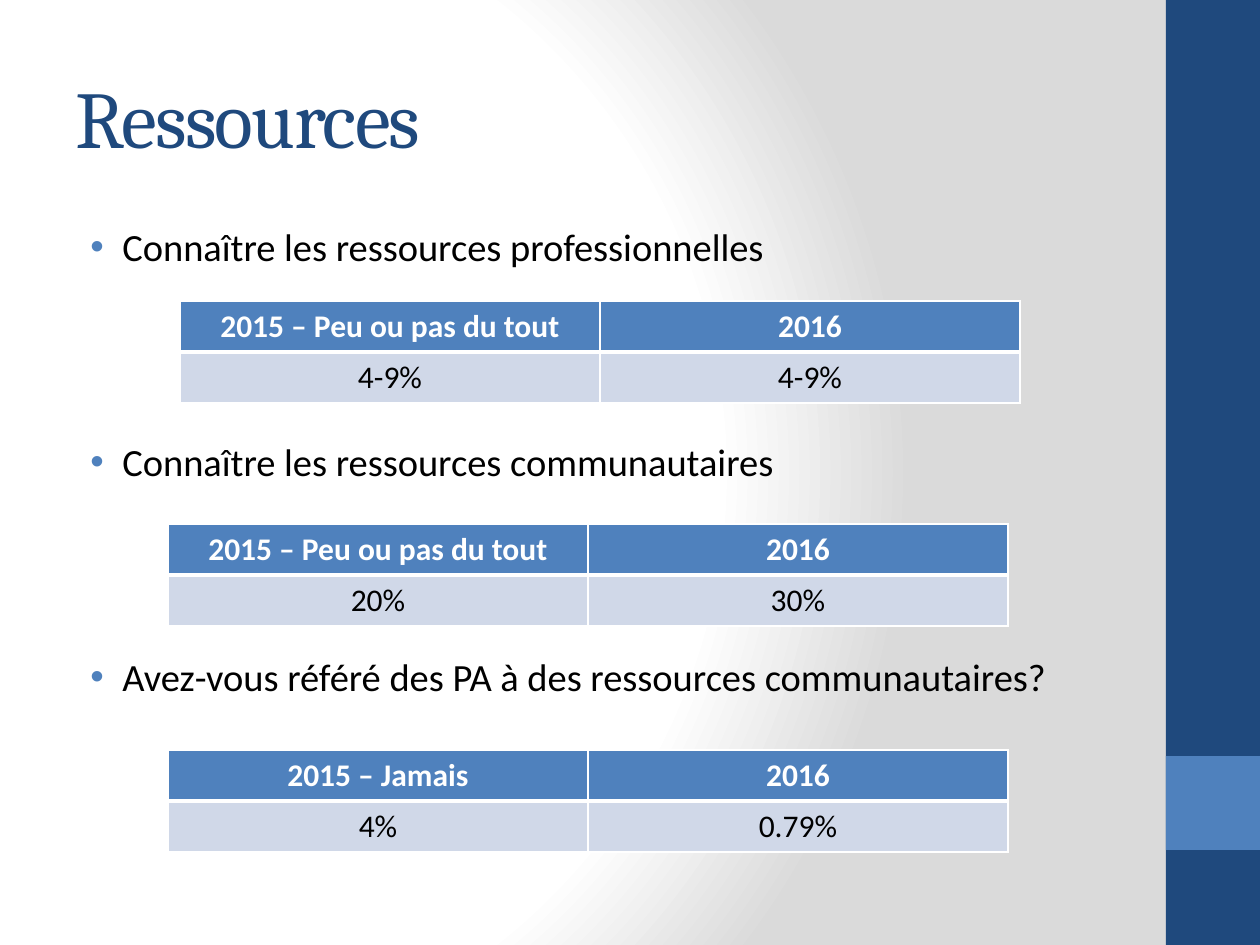
from pptx import Presentation
from pptx.dml.color import RGBColor
from pptx.enum.shapes import MSO_SHAPE as Preset
from pptx.enum.text import MSO_ANCHOR as Anchor, MSO_AUTO_SIZE as AutoSize, PP_ALIGN as Align
from pptx.oxml import parse_xml
from pptx.oxml.ns import nsdecls, qn
from pptx.util import Pt

PX = 914400 / 126
NAVY, BLUE, PALE = "1F497D", "4F81BD", "D0D8E8"
WHITE, GREY, BLACK = "FFFFFF", "DADADA", "000000"


def px(*lengths):
    return [round(length * PX) for length in lengths]


def rgb(value):
    return RGBColor.from_string(value)


def assign(target, values):
    for key, value in values.items():
        setattr(target, key, value)


def solid(fill, color):
    fill.solid()
    fill.fore_color.rgb = rgb(color)


def xml(tag, inner="", **attributes):
    listed = "".join(f' {key}="{value}"' for key, value in attributes.items())
    return f"<a:{tag}{listed}>{inner}</a:{tag}>"


def element(tag, inner="", **attributes):
    markup = xml(tag, inner, **attributes)
    return parse_xml(markup.replace(f"<a:{tag}", f"<a:{tag} {nsdecls('a')}", 1))


class Deck:
    title_font = {"name": "Cambria", "size": Pt(46), "bold": False}
    body_font = {"name": "Calibri", "size": Pt(22), "bold": False}
    header_font = {"name": "Calibri", "size": Pt(18), "bold": True}
    value_font = {**header_font, "bold": False}
    frame = {"word_wrap": True, "auto_size": AutoSize.NONE}

    def __init__(self, width, height):
        self.file = Presentation()
        assign(self.file, dict(zip(("slide_width", "slide_height"), px(width, height))))
        self.slide = self.file.slides.add_slide(self.file.slide_layouts[5])

    def add_words(self, paragraph, words, font, color):
        run = paragraph.add_run()
        run.text = words
        assign(run.font, font)
        run.font.color.rgb = rgb(color)
        return run

    def background(self, stops, focus):
        self.slide.background.fill.gradient()
        gradient = self.slide.element.find(".//" + qn("a:gradFill"))
        for child in list(gradient):
            gradient.remove(child)
        marks = "".join(
            xml("gs", xml("srgbClr", val=color), pos=percent * 1000)
            for percent, color in stops
        )
        sides = {side: percent * 1000 for side, percent in zip("ltrb", focus)}
        gradient.append(element("gsLst", marks))
        gradient.append(element("path", xml("fillToRect", **sides), path="circle"))

    def band(self, box, color):
        band = self.slide.shapes.add_shape(Preset.RECTANGLE, *px(*box))
        band.shadow.inherit = False
        solid(band.fill, color)
        band.line.fill.background()

    def title(self, box, words):
        title = self.slide.shapes.title
        assign(title, dict(zip(("left", "top", "width", "height"), px(*box))))
        assign(title.text_frame, {**self.frame, "vertical_anchor": Anchor.MIDDLE})
        paragraph = title.text_frame.paragraphs[0]
        paragraph.alignment = Align.LEFT
        run = self.add_words(paragraph, words, self.title_font, NAVY)
        run.font._element.set("spc", "-100")

    def bullets(self, box, lines, gap):
        body = self.slide.shapes.add_textbox(*px(*box)).text_frame
        assign(body, self.frame)
        margin, hanging = px(47, -32)
        for index, line in enumerate(lines):
            paragraph = body.add_paragraph() if index else body.paragraphs[0]
            paragraph.space_after = Pt(gap)
            layout = paragraph._p.get_or_add_pPr()
            layout.set("marL", str(margin))
            layout.set("indent", str(hanging))
            layout.append(element("buClr", xml("srgbClr", val=BLUE)))
            layout.append(element("buFont", typeface="Arial"))
            layout.append(element("buChar", char="•"))
            self.add_words(paragraph, line, self.body_font, BLACK)

    def cell(self, cell, words, font, color, fill, borders):
        properties = cell._tc.get_or_add_tcPr()
        line = xml("solidFill", xml("srgbClr", val=WHITE))
        for side, points in borders.items():
            properties.append(element(f"ln{side}", line, w=int(Pt(points))))
        solid(cell.fill, fill)
        paragraph = cell.text_frame.paragraphs[0]
        paragraph.alignment = Align.CENTER
        self.add_words(paragraph, words, font, color)

    def table(self, box, rows):
        table = self.slide.shapes.add_table(len(rows), len(rows[0]), *px(*box)).table
        looks = (
            (self.header_font, WHITE, BLUE, {"L": 1, "R": 1, "T": 1, "B": 3}),
            (self.value_font, BLACK, PALE, {"L": 1, "R": 1, "T": 3, "B": 1}),
        )
        for r, (row, look) in enumerate(zip(rows, looks)):
            for c, words in enumerate(row):
                self.cell(table.cell(r, c), words, *look)


def main():
    deck = Deck(1260, 945)
    deck.background([(0, WHITE), (75, WHITE), (100, GREY)], (20, 50, 100, 50))
    deck.band((1166, 0, 94, 945), NAVY)
    deck.band((1166, 756, 94, 94), BLUE)
    deck.title((63, 38, 1050, 157), "Ressources")

    rarely = "2015 – Peu ou pas du tout"
    topics = (
        ("Connaître les ressources professionnelles", 180, 301, rarely, "4-9%", "4-9%"),
        ("Connaître les ressources communautaires", 168, 524, rarely, "20%", "30%"),
        ("Avez-vous référé des PA à des ressources communautaires?",
         168, 750, "2015 – Jamais", "4%", "0.79%"),
    )
    deck.bullets((63, 217, 1050, 661), [topic[0] for topic in topics], 96.5)
    for _, left, top, before, *values in topics:
        deck.table((left, top, 840, 102), ((before, "2016"), values))
    deck.file.save("out.pptx")


if __name__ == "__main__":
    main()
